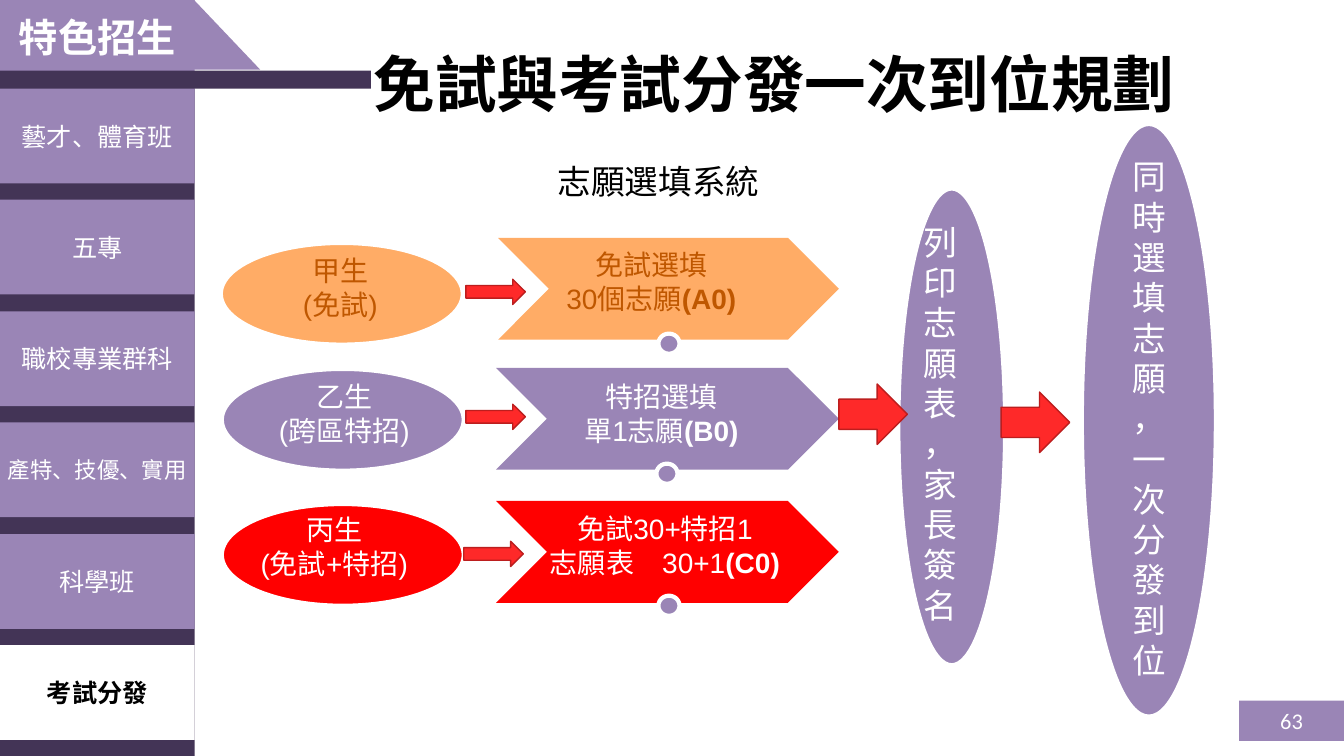
from pptx import Presentation
from pptx.dml.color import RGBColor
from pptx.enum.shapes import MSO_SHAPE as Shape
from pptx.enum.text import MSO_ANCHOR as Anchor, MSO_AUTO_SIZE as AutoSize, PP_ALIGN as Align
from pptx.util import Pt

PX = 9144  # 100 px to the inch
WHITE = RGBColor(0xFF, 0xFF, 0xFF)
BLACK = RGBColor(0, 0, 0)
PURPLE = RGBColor(0x9A, 0x85, 0xB6)
DARK_PURPLE = RGBColor(0x43, 0x34, 0x56)
ORANGE = RGBColor(0xFF, 0xAC, 0x66)
BROWN = RGBColor(0xBF, 0x57, 0x00)
RED = RGBColor(0xFF, 0, 0)
ARROW_RED = RGBColor(0xFE, 0x29, 0x29)
ARROW_EDGE = RGBColor(0xBC, 0x1E, 0x1E)

presentation = Presentation()
presentation.slide_width, presentation.slide_height = 1333 * PX, 750 * PX
slide = presentation.slides.add_slide(presentation.slide_layouts[5])


def add_block(kind, box, fill, edge=None, weight=3):
    shape = slide.shapes.add_shape(kind, *(value * PX for value in box))
    shape.shadow.inherit = False
    shape.fill.solid()
    shape.fill.fore_color.rgb = fill
    if edge is None:
        shape.line.fill.background()
    else:
        shape.line.color.rgb = edge
        shape.line.width = Pt(weight)
    return shape


def write(shape, lines, size, color, font="Calibri", bold=False, align=Align.CENTER,
          anchor=Anchor.MIDDLE, margin=0):
    """Each line is a list of runs; a run after the first is bold."""
    frame = shape.text_frame
    frame.word_wrap = True
    frame.auto_size = AutoSize.NONE
    frame.vertical_anchor = anchor
    frame.margin_left = frame.margin_right = margin * PX
    frame.margin_top = frame.margin_bottom = margin // 2 * PX
    for index, line in enumerate(lines):
        paragraph = frame.add_paragraph() if index else frame.paragraphs[0]
        paragraph.alignment = align
        for position, text in enumerate(line):
            run = paragraph.add_run()
            run.text = text
            run.font.name = font
            run.font.size = Pt(size)
            run.font.bold = bold or position > 0
            run.font.color.rgb = color


# Title
title = slide.shapes.title
title.left, title.top, title.width, title.height = 203 * PX, 45 * PX, 1130 * PX, 74 * PX
write(title, [["免試與考試分發一次到位規劃"]], 44, BLACK, bold=True)

# Header and sidebar
add_block(Shape.RECTANGLE, (0, 86, 193, 664), DARK_PURPLE)
add_block(Shape.ISOSCELES_TRIANGLE, (127, 0, 131, 69), PURPLE)
header = add_block(Shape.RECTANGLE, (0, 0, 193, 73), PURPLE)
write(header, [["特色招生"]], 28, WHITE, bold=True)
add_block(Shape.RECTANGLE, (0, 70, 368, 18), DARK_PURPLE)

tabs = [("藝才、體育班", 18), ("五專", 18), ("職校專業群科", 18),
        ("產特、技優、實用", 16), ("科學班", 18), ("考試分發", 18)]
for index, (label, size) in enumerate(tabs):
    current = label == "考試分發"
    tab = add_block(Shape.RECTANGLE, (0, round(88 + 110.4 * index), 193, 94),
                    WHITE if current else PURPLE)
    write(tab, [[label]], size, BLACK if current else WHITE, bold=current)

# Page number
page = add_block(Shape.RECTANGLE, (1229, 695, 104, 40), PURPLE)
write(page, [["63"]], 16, WHITE)

# Heading of the choice system
heading = slide.shapes.add_textbox(519 * PX, 155 * PX, 268 * PX, 51 * PX)
write(heading, [["志願選填系統"]], 24, BLACK, anchor=Anchor.TOP, margin=10)

# Students and their choices: boxes, colours, then the two labels
rows = [
    ((219, 241, 240, 101), (494, 236, 338, 101), (653, 331), (462, 277), ORANGE, BROWN,
     (244, 247, 187, 77), [["甲生"], ["(免試)"]],
     (537, 241, 218, 80), [["免試選填"], ["30個志願", "(A0)"]]),
    ((220, 366, 240, 101), (492, 365, 340, 101), (651, 460), (462, 401), PURPLE, WHITE,
     (247, 372, 189, 77), [["乙生"], ["(跨區特招)"]],
     (547, 372, 218, 80), [["特招選填"], ["單1志願", "(B0)"]]),
    ((220, 500, 240, 101), (492, 497, 340, 101), (653, 591), (460, 537), RED, WHITE,
     (233, 504, 197, 77), [["丙生"], ["(免試+特招)"]],
     (509, 503, 301, 80), [["免試30+特招1"], ["志願表　30+1", "(C0)"]]),
]
arrows = [(832, 381, 68, 60), (993, 389, 68, 60)]
for (student_box, chevron_box, dot, arrow, fill, color,
     student_label, student, choice_label, choice) in rows:
    add_block(Shape.CHEVRON, chevron_box, fill)
    add_block(Shape.OVAL, (*dot, 21, 20), PURPLE, WHITE)
    add_block(Shape.OVAL, student_box, fill, WHITE)
    for box, lines in ((student_label, student), (choice_label, choice)):
        label = slide.shapes.add_textbox(*(value * PX for value in box))
        write(label, lines, 20, color, "Arial", anchor=Anchor.TOP, margin=10)
    arrows.append((*arrow, 59, 25))

# Tall ovals: the narrow label boxes hold one character a line
steps = [
    ((891, 187, 106, 473), (906, 215, 70, 414), ["列印志願表", "，家長簽名"]),
    ((1073, 123, 133, 588), (1113, 150, 65, 535), ["同時選填志願", "，一次分發到位"]),
]
for oval_box, label_box, lines in steps:
    add_block(Shape.OVAL, oval_box, PURPLE, WHITE)
    label = slide.shapes.add_textbox(*(value * PX for value in label_box))
    write(label, [[line] for line in lines], 24, WHITE, "Arial",
          align=Align.LEFT, anchor=Anchor.TOP, margin=10)

# Arrows
for box in arrows:
    add_block(Shape.RIGHT_ARROW, box, ARROW_RED, ARROW_EDGE, 1)

presentation.save("out.pptx")
